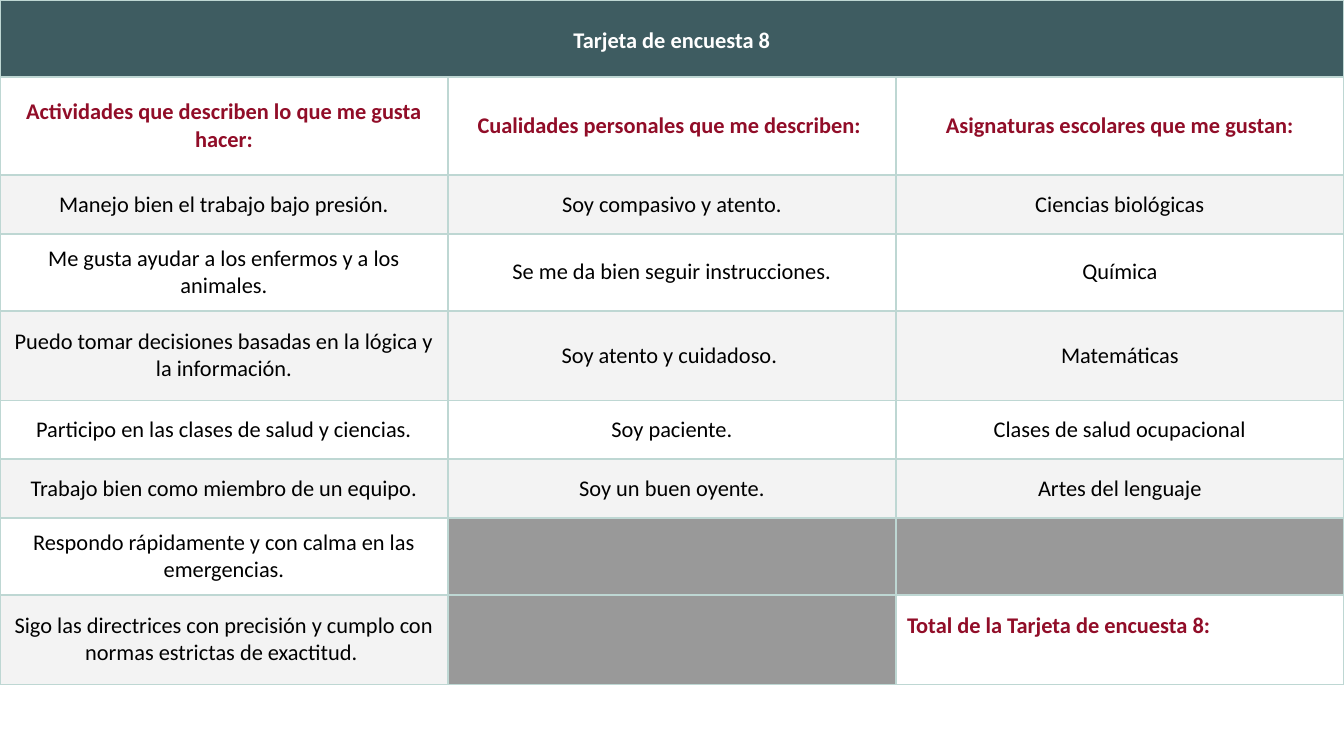
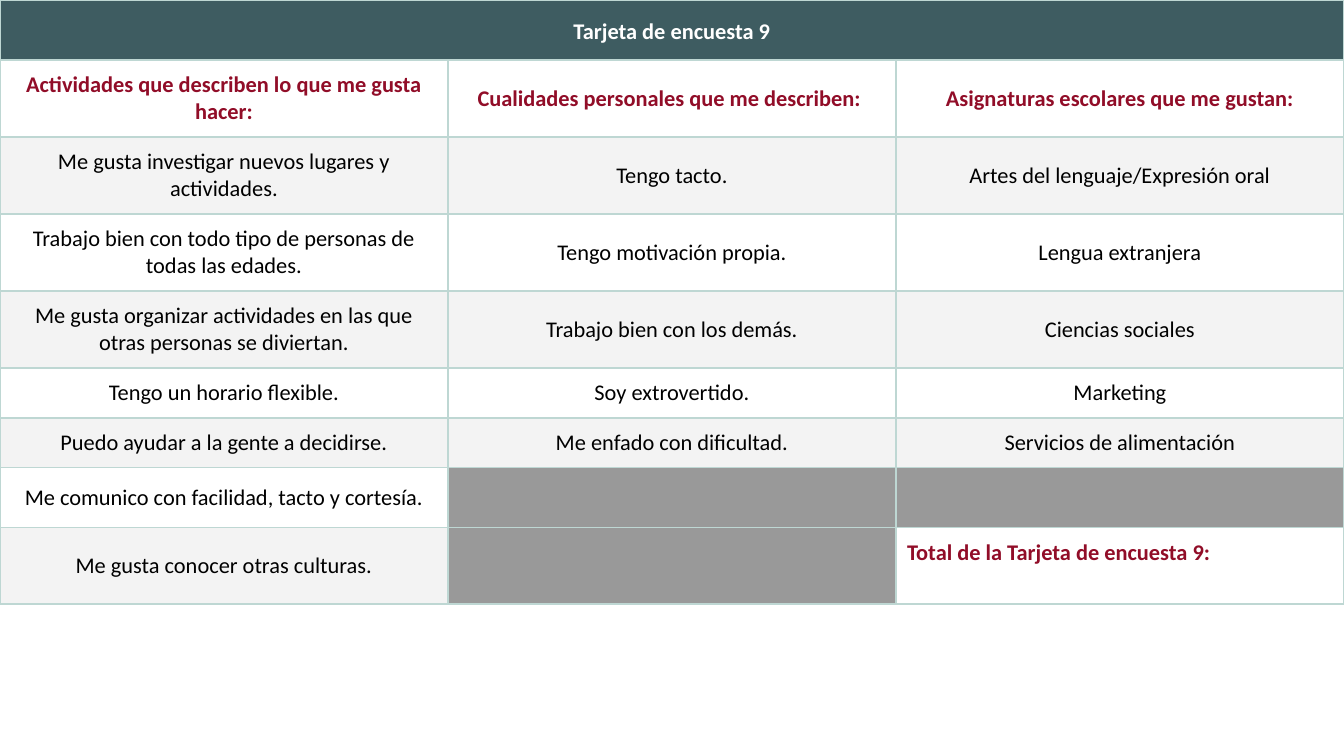
from lxml import etree
from pptx import Presentation
from pptx import util as u
from pptx.dml.color import RGBColor
from pptx.enum import text
from pptx.oxml.ns import qn

PX = u.Inches(1) // 96
WIDTH, HEIGHT = 960, 540
TEAL = RGBColor(0x3E, 0x5C, 0x61)
MINT = RGBColor(0xBE, 0xD7, 0xD3)
CRIMSON = RGBColor(0x91, 0x0D, 0x28)
BAND = RGBColor(0xF3, 0xF3, 0xF3)
GREY = RGBColor(0x99, 0x99, 0x99)
WHITE = RGBColor(0xFF, 0xFF, 0xFF)
BLACK = RGBColor(0, 0, 0)

HEADINGS = (
    "Actividades que describen lo que me gusta hacer:",
    "Cualidades personales que me describen: ",
    "Asignaturas escolares que me gustan:",
)
CENTER, LEFT = text.PP_ALIGN.CENTER, text.PP_ALIGN.LEFT
TITLE = {"color": WHITE, "bold": True, "align": CENTER,
         "spacing": {"line_spacing": 1.15, "space_after": u.Pt(6)}}
HEADING = {"color": CRIMSON, "bold": True, "align": CENTER, "highlight": WHITE,
           "spacing": {"space_before": u.Pt(10)}}
TOTAL = {**HEADING, "align": LEFT}
BODY = {"color": BLACK, "bold": False, "align": CENTER, "spacing": {}}

CARDS = [
    {
        "number": 8,
        "height": 487,
        "rows": (55, 70, 42, 46, 64, 42, 42, 46, 64),
        "activities": (
            "Manejo bien el trabajo bajo presión.",
            "Me gusta ayudar a los enfermos y a los animales.",
            "Puedo tomar decisiones basadas en la lógica y la información.",
            "Participo en las clases de salud y ciencias.",
            "Trabajo bien como miembro de un equipo.",
            "Respondo rápidamente y con calma en las emergencias.",
            "Sigo las directrices con precisión y cumplo con normas estrictas de exactitud. ",
        ),
        "qualities": (
            "Soy compasivo y atento.",
            "Se me da bien seguir instrucciones.",
            "Soy atento y cuidadoso. ",
            "Soy paciente.",
            "Soy un buen oyente.",
        ),
        "subjects": (
            "Ciencias biológicas",
            "Química",
            "Matemáticas",
            "Clases de salud ocupacional",
            "Artes del lenguaje",
        ),
    },
    {
        "number": 9,
        "height": 423,
        "rows": (43, 47, 34, 34, 43, 28, 28, 43, 34),
        "activities": (
            "Me gusta investigar nuevos lugares y actividades.",
            "Trabajo bien con todo tipo de personas de todas las edades.",
            "Me gusta organizar actividades en las que otras personas se diviertan.",
            "Tengo un horario flexible.",
            "Puedo ayudar a la gente a decidirse.",
            "Me comunico con facilidad, tacto y cortesía.",
            "Me gusta conocer otras culturas.",
        ),
        "qualities": (
            "Tengo tacto.",
            "Tengo motivación propia.",
            "Trabajo bien con los demás.",
            "Soy extrovertido.",
            "Me enfado con dificultad.",
        ),
        "subjects": (
            "Artes del lenguaje/Expresión oral",
            "Lengua extranjera",
            "Ciencias sociales",
            "Marketing",
            "Servicios de alimentación",
        ),
    },
]


def paint(cell, fill):
    borders = cell._tc.get_or_add_tcPr()
    for side in ("lnL", "lnR", "lnT", "lnB"):
        line = etree.SubElement(borders, qn(f"a:{side}"), w=str(u.Pt(1)))
        solid = etree.SubElement(line, qn("a:solidFill"))
        etree.SubElement(solid, qn("a:srgbClr"), val=str(MINT))
    if fill is None:
        cell.fill.background()
    else:
        cell.fill.solid()
        cell.fill.fore_color.rgb = fill


def write(cell, words, style):
    cell.vertical_anchor = text.MSO_ANCHOR.MIDDLE
    for side in ("left", "right", "top", "bottom"):
        setattr(cell, f"margin_{side}", 8 * PX)
    paragraph = cell.text_frame.paragraphs[0]
    paragraph.alignment = style["align"]
    for name, value in style["spacing"].items():
        setattr(paragraph, name, value)
    run = paragraph.add_run()
    run.text = words
    for name, value in {"size": u.Pt(12), "name": "Calibri", "bold": style["bold"]}.items():
        setattr(run.font, name, value)
    run.font.color.rgb = style["color"]
    if "highlight" in style:
        highlight = etree.Element(qn("a:highlight"))
        etree.SubElement(highlight, qn("a:srgbClr"), val=str(style["highlight"]))
        run._r.rPr.find(qn("a:solidFill")).addnext(highlight)


deck = Presentation()
deck.slide_width, deck.slide_height = WIDTH * PX, HEIGHT * PX

for card in CARDS:
    slide = deck.slides.add_slide(deck.slide_layouts[6])
    heights = card["rows"]
    frame = slide.shapes.add_table(
        len(heights), len(HEADINGS), 0, 0, WIDTH * PX, card["height"] * PX)
    survey = frame.table
    survey.first_row = survey.horz_banding = False
    for row, height in zip(survey.rows, heights):
        row.height = height * PX
    frame.height = card["height"] * PX

    last = len(heights) - 1
    answers = (card["activities"], card["qualities"], card["subjects"])
    for c, (heading, entries) in enumerate(zip(HEADINGS, answers)):
        paint(survey.cell(0, c), TEAL)
        paint(survey.cell(1, c), None)
        write(survey.cell(1, c), heading, HEADING)
        for r in range(2, last + 1):
            cell = survey.cell(r, c)
            if r - 2 < len(entries):
                paint(cell, None if r % 2 else BAND)
                write(cell, entries[r - 2], BODY)
            else:
                paint(cell, WHITE if (r, c) == (last, 2) else GREY)

    survey.cell(0, 0).merge(survey.cell(0, 2))
    write(survey.cell(0, 0), f"Tarjeta de encuesta {card['number']}", TITLE)
    total = survey.cell(last, 2)
    write(total, f"Total de la Tarjeta de encuesta {card['number']}:", TOTAL)
    total.margin_bottom = 27 * PX

deck.save("out.pptx")
